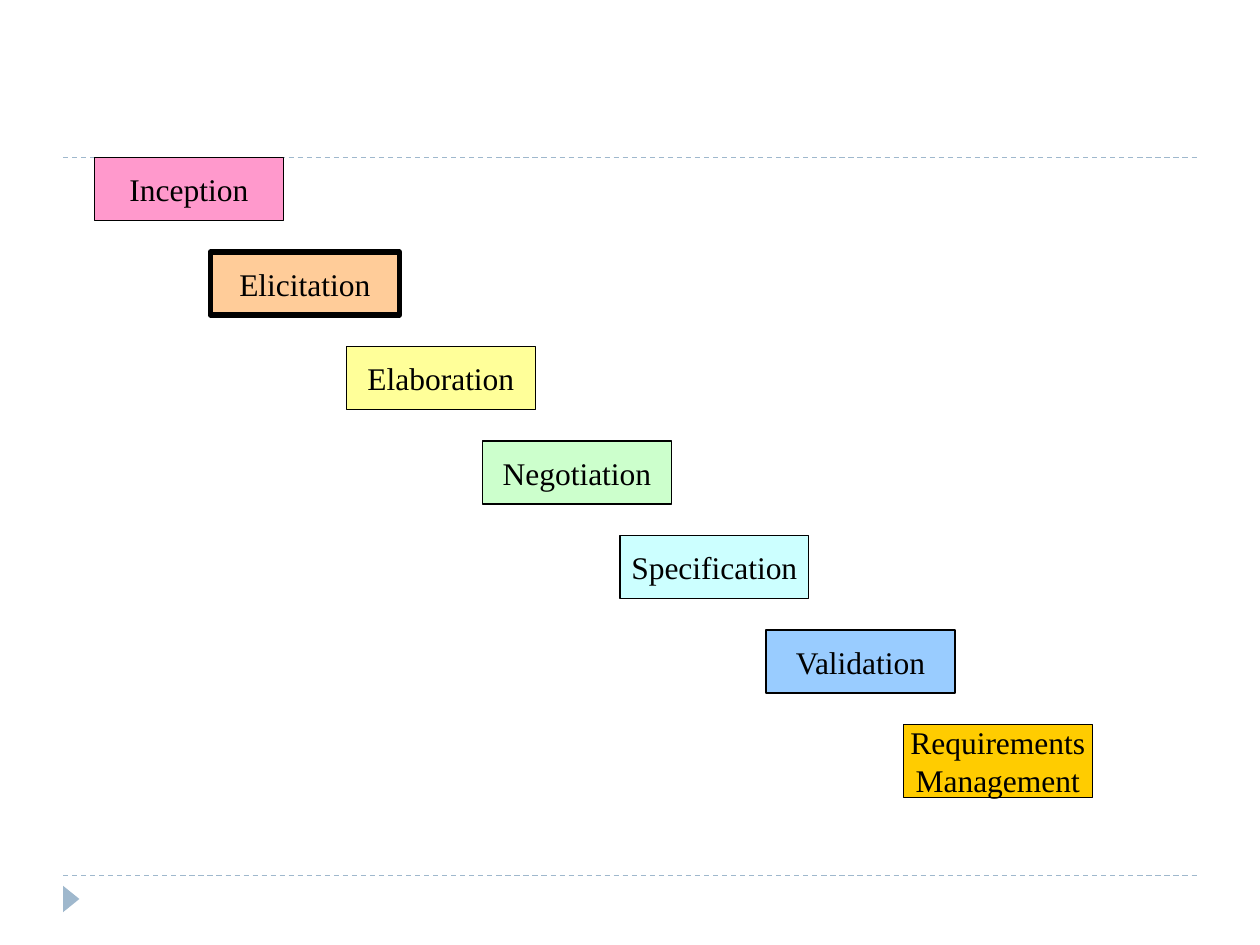
"""Build a slide showing the requirements engineering tasks as a descending staircase."""
from lxml.etree import SubElement
from pptx import Presentation
from pptx.dml.color import RGBColor
from pptx.enum.dml import MSO_LINE
from pptx.enum.shapes import MSO_CONNECTOR, MSO_SHAPE
from pptx.enum.text import MSO_ANCHOR, PP_ALIGN
from pptx.oxml.ns import qn
from pptx.util import Inches, Pt

COLORS = {
    "rule": "9FB8CD",
    "ink": "000000",
    "Inception": "FF99CC",
    "Elicitation": "FFCC99",
    "Elaboration": "FFFF99",
    "Negotiation": "CCFFCC",
    "Specification": "CCFFFF",
    "Validation": "99CCFF",
    "Requirements\nManagement": "FFCC00",
}
TASKS = [
    ("Inception", 0.75),
    ("Elicitation", 1.67),
    ("Elaboration", 2.75),
    ("Negotiation", 3.83),
    ("Specification", 4.92),
    ("Validation", 6.08),
    ("Requirements\nManagement", 7.17),
]
FIRST_TOP, STEP = 1.25, 0.75


def color(name):
    return RGBColor.from_string(COLORS[name])


presentation = Presentation()
presentation.slide_width = Inches(10)
presentation.slide_height = Inches(7.5)
slide = presentation.slides.add_slide(presentation.slide_layouts[6])

for y in (6.95, 1.25):
    rule = slide.shapes.add_connector(
        MSO_CONNECTOR.STRAIGHT, Inches(0.5), Inches(y), Inches(9.5), Inches(y))
    rule.line.color.rgb = color("rule")
    rule.line.width = Pt(0.75)
    rule.line.dash_style = MSO_LINE.DASH
    SubElement(rule._element.spPr, qn("a:effectLst"))

marker = slide.shapes.add_shape(
    MSO_SHAPE.ISOSCELES_TRIANGLE, Inches(0.46), Inches(7.07), Inches(0.21), Inches(0.13))
marker.rotation = 90
marker.shadow.inherit = False
marker.fill.solid()
marker.fill.fore_color.rgb = color("rule")
marker.line.fill.background()

for index, (task, left) in enumerate(TASKS):
    height = 0.58 if "\n" in task else 0.5
    box = slide.shapes.add_shape(
        MSO_SHAPE.RECTANGLE, Inches(left), Inches(FIRST_TOP + index * STEP),
        Inches(1.5), Inches(height))
    box.shadow.inherit = False
    box.fill.solid()
    box.fill.fore_color.rgb = color(task)
    box.line.color.rgb = color("ink")
    box.line.width = Pt(3 if task == "Elicitation" else 0.75)
    text_frame = box.text_frame
    text_frame.word_wrap = False
    text_frame.vertical_anchor = MSO_ANCHOR.MIDDLE
    text_frame.text = task
    for paragraph in text_frame.paragraphs:
        paragraph.alignment = PP_ALIGN.CENTER
        paragraph.font.name = "Times New Roman"
        paragraph.font.size = Pt(18)
        paragraph.font.color.rgb = color("ink")

presentation.save("out.pptx")
